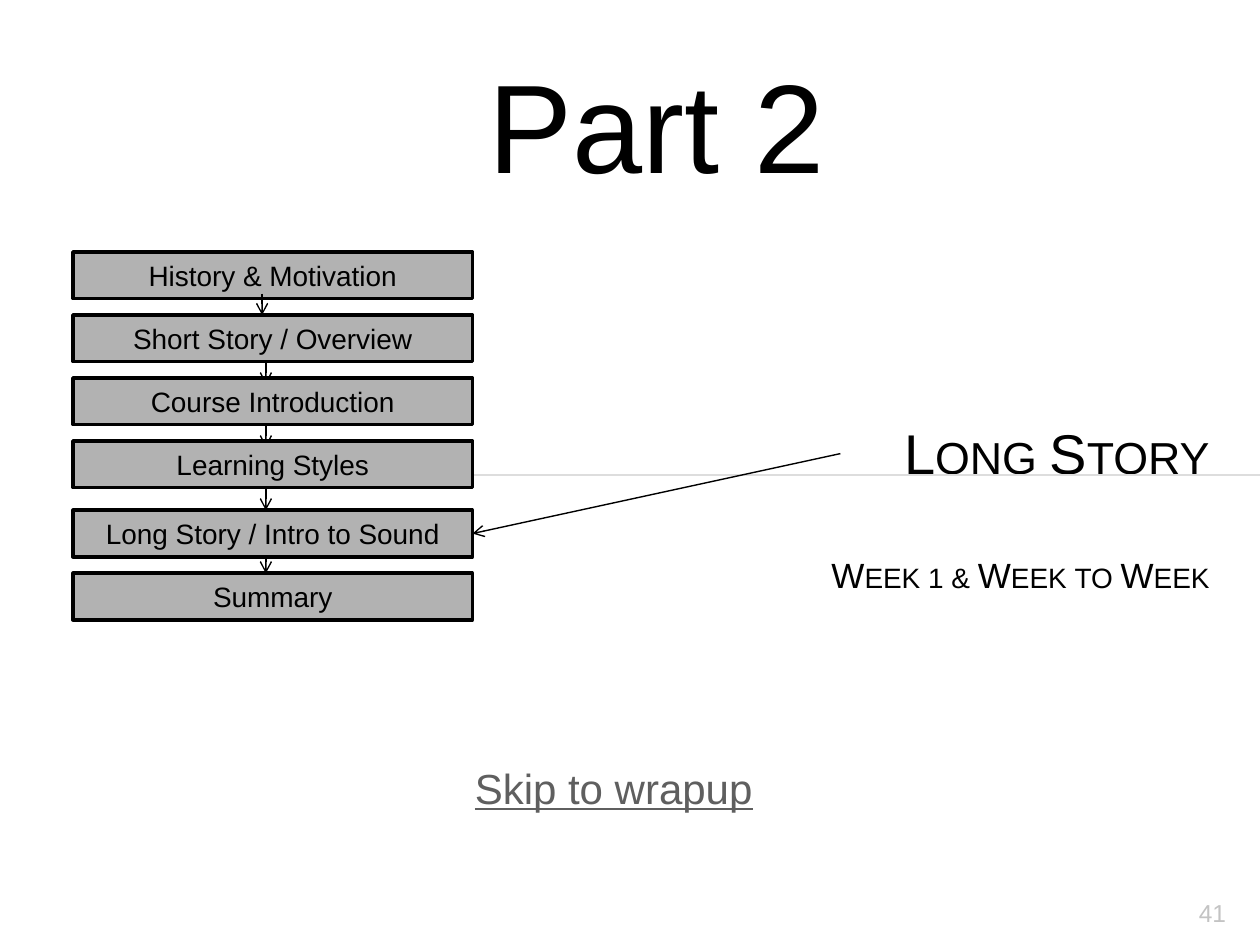
from lxml import etree
from pptx import Presentation
from pptx.dml.color import RGBColor
from pptx.enum.shapes import MSO_CONNECTOR, MSO_SHAPE
from pptx.enum.text import MSO_ANCHOR, MSO_AUTO_SIZE, PP_ALIGN
from pptx.oxml.ns import qn
from pptx.util import Inches, Pt

FONT = "Arial"
BLACK = "000000"
TOPICS = ["History & Motivation", "Short Story / Overview", "Course Introduction",
          "Learning Styles", "Long Story / Intro to Sound", "Summary"]
CURRENT_TOPIC = 4


def rgb(hex_colour):
    return RGBColor.from_string(hex_colour)


def write(paragraph, text, size, colour=BLACK, align=PP_ALIGN.LEFT,
          underline=None, small_caps=False):
    paragraph.alignment = align
    run = paragraph.add_run()
    run.text = text
    run.font.name = FONT
    run.font.size = Pt(size)
    run.font.color.rgb = rgb(colour)
    run.font.underline = underline
    if small_caps:
        run.font._element.set("cap", "small")


def add_label(slide, box, text, wrap=False, **text_format):
    label = slide.shapes.add_textbox(*map(Inches, box))
    label.text_frame.word_wrap = wrap
    write(label.text_frame.paragraphs[0], text, **text_format)


def add_line(slide, start, end, colour=BLACK, width=0.79, arrow=False):
    line = slide.shapes.add_connector(
        MSO_CONNECTOR.STRAIGHT, *map(Inches, (*start, *end)))
    line.line.color.rgb = rgb(colour)
    line.line.width = Pt(width)
    if arrow:
        outline = line.line._get_or_add_ln()
        etree.SubElement(outline, qn("a:tailEnd"), type="arrow")
    etree.SubElement(line._element.spPr, qn("a:effectLst"))
    return line


def add_heading(slide, box):
    """Right-aligned title with its subtitle line."""
    title = slide.shapes.title
    title.left, title.top, title.width, title.height = map(Inches, box)
    frame = title.text_frame
    frame.word_wrap = True
    frame.auto_size = MSO_AUTO_SIZE.NONE
    frame.vertical_anchor = MSO_ANCHOR.TOP
    frame.margin_top = Inches(0.1)
    heading_format = {"align": PP_ALIGN.RIGHT, "small_caps": True}
    write(frame.paragraphs[0], "Long Story", 32, **heading_format)
    subtitle = frame.add_paragraph()
    subtitle.space_before = Pt(39)
    write(subtitle, "Week 1 & Week to Week", 20, **heading_format)


def add_topic(slide, box, text):
    topic = slide.shapes.add_shape(MSO_SHAPE.RECTANGLE, *map(Inches, box))
    topic.shadow.inherit = False
    topic.fill.solid()
    topic.fill.fore_color.rgb = rgb("B2B2B2")
    topic.line.color.rgb = rgb(BLACK)
    topic.line.width = Pt(2)
    frame = topic.text_frame
    frame.word_wrap = False
    frame.vertical_anchor = MSO_ANCHOR.MIDDLE
    write(frame.paragraphs[0], text, 16, align=PP_ALIGN.CENTER)
    return topic


def add_outline(slide, box):
    """Stack of topics joined by short arrows; returns the topic shapes."""
    left, top, width, height = box
    pitch, topic_height, arrow_length = 0.5, 0.37, 0.17
    extra_gap = height - pitch * (len(TOPICS) - 1) - topic_height

    def add_step(x, y):
        add_line(slide, (x, y), (x, y + arrow_length), arrow=True)

    for step in range(1, len(TOPICS) - 1):
        add_step(left + 1.53, top + step * pitch + 0.38)
    topics = []
    for index, text in enumerate(TOPICS):
        topic_top = top + index * pitch
        if index >= CURRENT_TOPIC:
            topic_top += extra_gap
        topics.append(add_topic(slide, (left, topic_top, width, topic_height), text))
    add_step(left + 1.5, top + 0.33)
    return topics


def build_slide(presentation):
    slide = presentation.slides.add_slide(presentation.slide_layouts[5])
    add_line(slide, (0.56, 3.77), (10, 3.77), colour="DDDDDD", width=0.75)
    add_label(slide, (9, 7.08, 0.83, 0.27), "41", wrap=True, size=14,
              colour="C3C3C3", align=PP_ALIGN.RIGHT)
    add_heading(slide, (4.92, 3.22, 4.78, 0.76))
    topics = add_outline(slide, (0.58, 2, 3.17, 2.92))
    pointer = add_line(slide, (6.67, 3.6), (3.75, 4.23), arrow=True)
    pointer.end_connect(topics[CURRENT_TOPIC], 3)
    add_label(slide, (3.78, 0.33, 2.89, 1.31), "Part 2", size=72)
    add_label(slide, (3.67, 6, 2.43, 0.5), "Skip to wrapup", size=24,
              colour="5F5F5F", underline=True)


def main():
    presentation = Presentation()
    presentation.slide_width = Inches(10)
    presentation.slide_height = Inches(7.5)
    build_slide(presentation)
    presentation.save("out.pptx")


if __name__ == "__main__":
    main()
